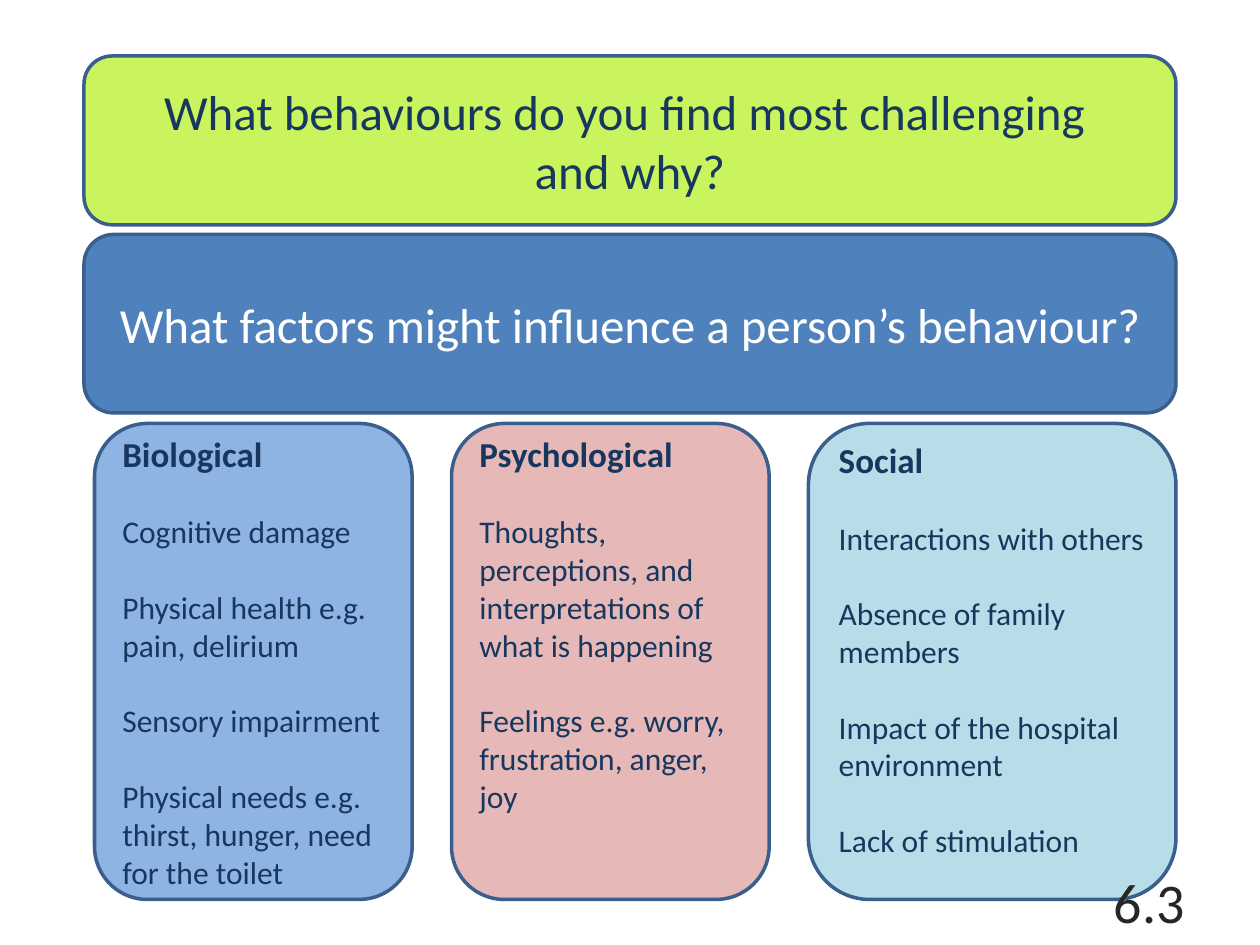
from pptx import Presentation
from pptx.dml.color import RGBColor
from pptx.enum.shapes import MSO_SHAPE
from pptx.enum.text import MSO_ANCHOR, PP_ALIGN
from pptx.util import Pt

COLORS = {
    "lime": "C9F45E", "blue": "4F81BD", "sky": "8EB4E3", "rose": "E6B9B8",
    "aqua": "B7DEE8", "edge": "3A5F8C", "navy": "17375E", "white": "FFFFFF",
    "dark": "262626",
}


def color(name):
    return RGBColor.from_string(COLORS[name])


def add_box(left, top, width, height, fill, lines, size, ink, align):
    """Add a rounded box, or a plain text box if fill is None."""
    area = [Pt(n) for n in (left, top, width, height)]
    if fill:
        box = slide.shapes.add_shape(MSO_SHAPE.ROUNDED_RECTANGLE, *area)
        box.shadow.inherit = False
        box.fill.solid()
        box.fill.fore_color.rgb = color(fill)
        box.line.color.rgb = color("edge")
        box.line.width = Pt(2)
    else:
        box = slide.shapes.add_textbox(*area)
    frame = box.text_frame
    frame.word_wrap = True
    frame.vertical_anchor = MSO_ANCHOR.MIDDLE
    frame.text = "\n".join(lines)
    for para in frame.paragraphs:
        para.alignment = align
        for run in para.runs:
            run.font.name = "Calibri"
            run.font.size = Pt(size)
            run.font.color.rgb = color(ink)
    return frame


deck = Presentation()
deck.slide_width, deck.slide_height = Pt(720), Pt(540)
slide = deck.slides.add_slide(deck.slide_layouts[6])

# Questions
add_box(48, 32, 624, 96.5, "lime",
        ["What behaviours do you find most challenging ", "and why?"],
        28, "navy", PP_ALIGN.CENTER)
add_box(48, 134, 624, 102, "blue",
        ["What factors might influence a person’s behaviour?"],
        28, "white", PP_ALIGN.CENTER)

# Factors: left, width, bottom margin, fill, heading and items
factors = [
    (54, 181.5, 3.6, "sky", [
        "Biological", "Cognitive damage", "Physical health e.g. pain, delirium",
        "Sensory impairment",
        "Physical needs e.g. thirst, hunger, need for the toilet"]),
    (258, 181.5, 47, "rose", [
        "Psychological",
        "Thoughts, perceptions, and interpretations of what is happening",
        "Feelings e.g. worry, frustration, anger, joy"]),
    (462, 210, 18, "aqua", [
        "Social", "Interactions with others", "Absence of family members",
        "Impact of the hospital environment", "Lack of stimulation"]),
]
for left, width, margin, fill, lines in factors:
    frame = add_box(left, 242, width, 272, fill, lines, 18, "navy", PP_ALIGN.LEFT)
    frame.margin_bottom = Pt(margin)
    head, *items = frame.paragraphs
    head.runs[0].font.size = Pt(20)
    head.runs[0].font.bold = True
    for item in items:
        item.space_before = Pt(21.6)

# Page mark
add_box(516, 500.5, 168, 28.5, None, ["6.3"], 32, "dark", PP_ALIGN.RIGHT)

deck.save("out.pptx")
